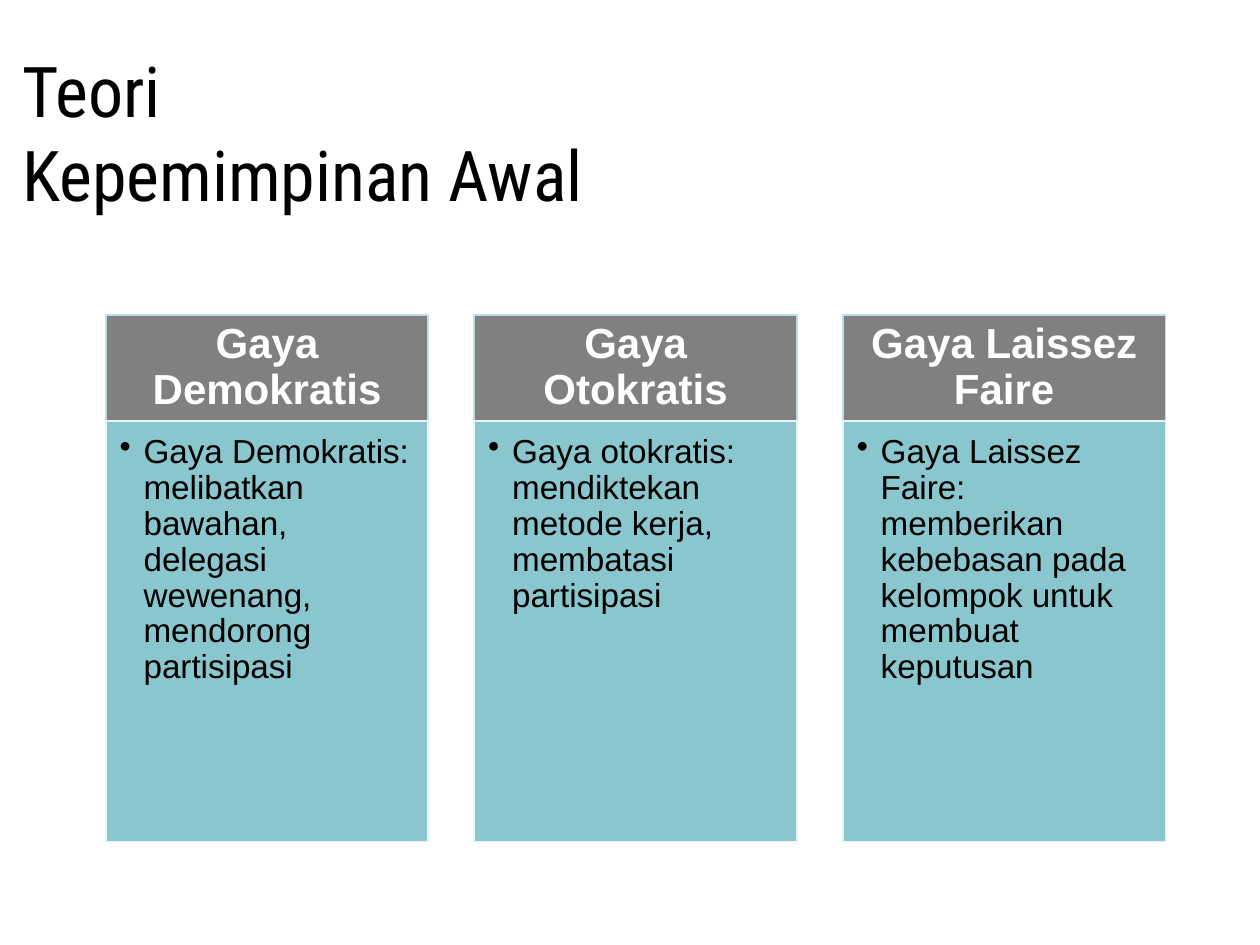
"""Build the slide on early leadership theories with three style columns."""
from dataclasses import dataclass

from lxml.etree import SubElement
from pptx import Presentation
from pptx.dml.color import RGBColor
from pptx.enum.shapes import MSO_SHAPE
from pptx.enum.text import MSO_ANCHOR, PP_ALIGN
from pptx.oxml.ns import qn
from pptx.shapes.autoshape import Shape
from pptx.slide import Slide
from pptx.util import Inches, Pt

COLUMN_LEFT = 0.84
COLUMN_STEP = 2.925
COLUMN_WIDTH = 2.56
HEADING_TOP = 2.5
HEADING_HEIGHT = 0.84
BODY_HEIGHT = 3.34


@dataclass(frozen=True)
class LeadershipStyle:
    heading: str
    description: str


@dataclass(frozen=True)
class PanelFormat:
    top: float
    height: float
    fill: str
    line: str
    insets: tuple[float, float, float, float]
    anchor: MSO_ANCHOR
    alignment: PP_ALIGN
    size: float
    color: str
    bold: bool
    space_after: float
    bulleted: bool


STYLES = [
    LeadershipStyle(
        "Gaya Demokratis",
        "Gaya Demokratis: melibatkan bawahan, delegasi wewenang, mendorong partisipasi",
    ),
    LeadershipStyle(
        "Gaya Otokratis",
        "Gaya otokratis: mendiktekan metode kerja, membatasi partisipasi",
    ),
    LeadershipStyle(
        "Gaya Laissez Faire",
        "Gaya Laissez Faire: memberikan kebebasan pada kelompok untuk membuat keputusan",
    ),
]

HEADING = PanelFormat(
    HEADING_TOP, HEADING_HEIGHT, "808080", "BBE0E3", (0.15, 0.08, 0.15, 0.08),
    MSO_ANCHOR.MIDDLE, PP_ALIGN.CENTER, 24, "FFFFFF", True, 8.4, False,
)
BODY = PanelFormat(
    HEADING_TOP + HEADING_HEIGHT, BODY_HEIGHT, "8AC6CD", "E7F3F4", (0.11, 0.11, 0.15, 0.17),
    MSO_ANCHOR.TOP, PP_ALIGN.LEFT, 19, "000000", False, 2.85, True,
)


def rgb(color: str) -> RGBColor:
    return RGBColor.from_string(color)


def set_text(shape: Shape, text: str, font_name: str, size: float, color: str, bold: bool) -> None:
    shape.text_frame.word_wrap = True
    paragraph = shape.text_frame.paragraphs[0]
    paragraph.text = text
    for run in paragraph.runs:
        run.font.name = font_name
        run.font.size = Pt(size)
        run.font.bold = bold
        run.font.color.rgb = rgb(color)


def add_bullet(shape: Shape) -> None:
    paragraph = shape.text_frame.paragraphs[0]
    paragraph.level = 1
    properties = paragraph._p.get_or_add_pPr()
    properties.set("marL", str(Inches(0.19)))
    properties.set("indent", str(Inches(-0.19)))
    SubElement(properties, qn("a:buChar")).set("char", "•")


def add_panel(slide: Slide, left: float, text: str, panel: PanelFormat) -> None:
    shape = slide.shapes.add_shape(
        MSO_SHAPE.RECTANGLE, Inches(left), Inches(panel.top), Inches(COLUMN_WIDTH), Inches(panel.height)
    )
    shape.shadow.inherit = False
    shape.fill.solid()
    shape.fill.fore_color.rgb = rgb(panel.fill)
    shape.line.color.rgb = rgb(panel.line)
    shape.line.width = Pt(1)

    frame = shape.text_frame
    frame.margin_left, frame.margin_top, frame.margin_right, frame.margin_bottom = map(Inches, panel.insets)
    frame.vertical_anchor = panel.anchor
    set_text(shape, text, "Arial", panel.size, panel.color, panel.bold)
    paragraph = frame.paragraphs[0]
    paragraph.alignment = panel.alignment
    paragraph.line_spacing = 0.9
    paragraph.space_after = Pt(panel.space_after)
    if panel.bulleted:
        add_bullet(shape)


def add_title(slide: Slide) -> None:
    title = slide.shapes.add_textbox(Inches(0.08), Inches(0.5), Inches(6.92), Inches(1.08))
    title.text_frame.vertical_anchor = MSO_ANCHOR.MIDDLE
    set_text(title, "Teori\vKepemimpinan Awal", "Roboto Condensed", 40, "000000", False)


def main() -> None:
    presentation = Presentation()
    presentation.slide_width = Inches(10)
    presentation.slide_height = Inches(7.5)
    slide = presentation.slides.add_slide(presentation.slide_layouts[6])
    add_title(slide)
    for index, style in enumerate(STYLES):
        left = COLUMN_LEFT + index * COLUMN_STEP
        add_panel(slide, left, style.heading, HEADING)
        add_panel(slide, left, style.description, BODY)
    presentation.save("out.pptx")


if __name__ == "__main__":
    main()
